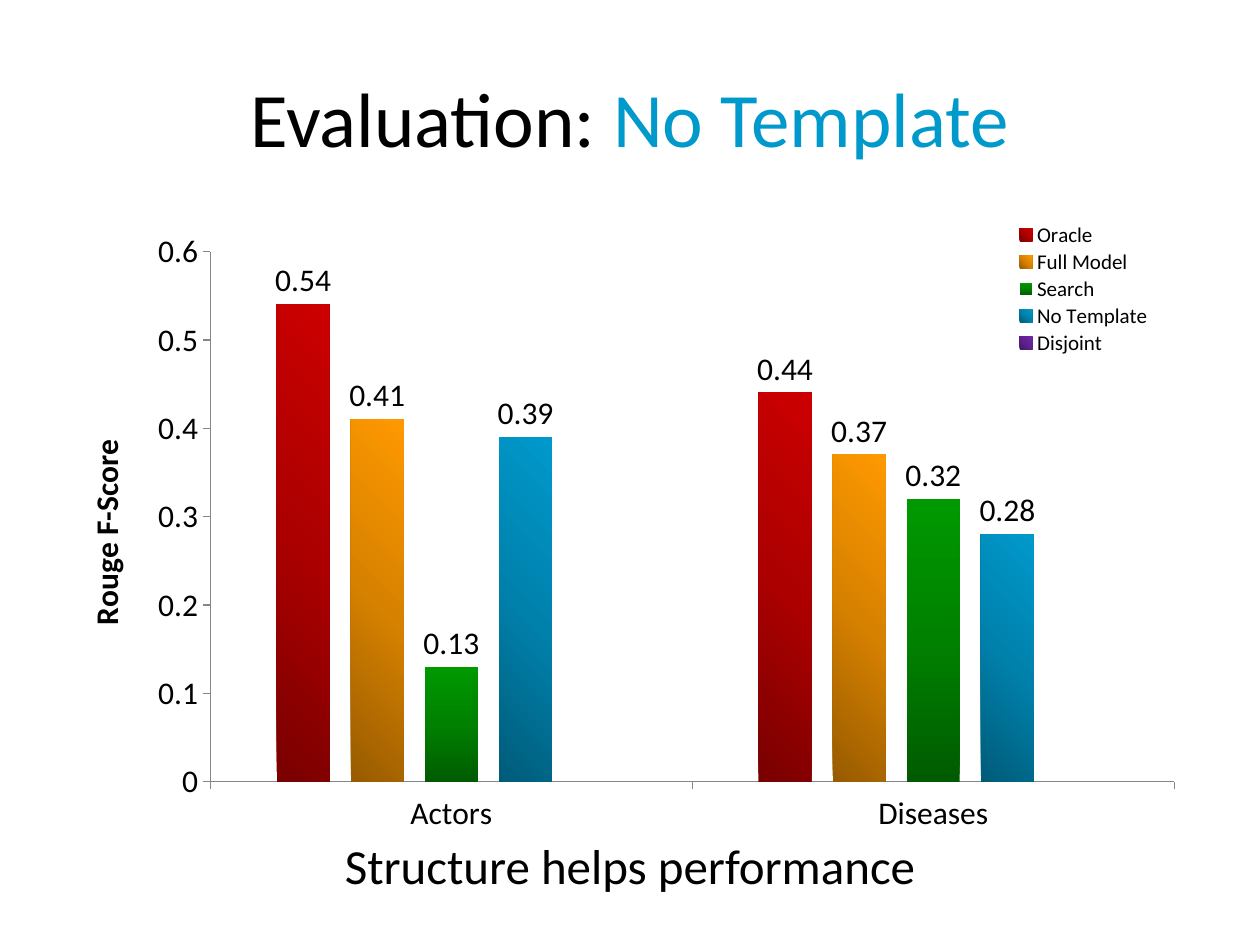
from lxml import etree
from pptx import Presentation
from pptx import util as u
from pptx.chart.data import CategoryChartData
from pptx.dml.color import RGBColor
from pptx.enum import chart as charts, text
from pptx.oxml import ns

BLACK = RGBColor(0, 0, 0)
BLUE = RGBColor(0x00, 0x99, 0xCC)
GRAY = RGBColor(0x86, 0x86, 0x86)
FONT = "Calibri"

SERIES = [
    ("Oracle", (0.54, 0.44), ("790000", "AC0000", "CC0000"), 315),
    ("Full Model", (0.41, 0.37), ("975B00", "D78100", "FF9900"), 315),
    ("Search", (0.13, 0.32), ("005B00", "008100", "009900"), 270),
    ("No Template", (0.39, 0.28), ("005B79", "0081AC", "0099CC"), 315),
    ("Disjoint", (None, None), ("431764", "5F218E", "7128A8"), 315),
]


def set_layout(element, index, values):
    for old in element.findall(ns.qn("c:layout")):
        element.remove(old)
    layout = etree.Element(ns.qn("c:layout"))
    manual = etree.SubElement(layout, ns.qn("c:manualLayout"))
    for tag, value in values.items():
        etree.SubElement(manual, ns.qn(f"c:{tag}"), val=str(value))
    element.insert(index, layout)


def style_font(font, size, color=BLACK, bold=False):
    for name, value in {"name": FONT, "size": u.Pt(size), "bold": bold}.items():
        setattr(font, name, value)
    font.color.rgb = color


presentation = Presentation()
presentation.slide_width = u.Pt(720)
presentation.slide_height = u.Pt(540)
slide = presentation.slides.add_slide(presentation.slide_layouts[6])

TEXTS = [
    (21.6, 90, 44, text.MSO_ANCHOR.MIDDLE, [("Evaluation: ", BLACK), ("No Template", BLUE)]),
    (473.76, 48.24, 28, text.MSO_ANCHOR.TOP, [("Structure helps performance", BLACK)]),
]
for top, height, size, anchor, runs in TEXTS:
    box = slide.shapes.add_textbox(u.Pt(36), u.Pt(top), u.Pt(648), u.Pt(height))
    frame = box.text_frame
    frame.word_wrap = True
    frame.vertical_anchor = anchor
    paragraph = frame.paragraphs[0]
    paragraph.alignment = text.PP_ALIGN.CENTER
    for words, color in runs:
        run = paragraph.add_run()
        run.text = words
        style_font(run.font, size, color)

data = CategoryChartData()
data.categories = ["Actors", "Diseases"]
for name, values, colors, angle in SERIES:
    data.add_series(name, values)
chart = slide.shapes.add_chart(
    charts.XL_CHART_TYPE.COLUMN_CLUSTERED,
    u.Pt(36), u.Pt(126), u.Pt(648), u.Pt(356.4), data,
).chart
style_font(chart.font, 18)
chart.has_title = False

plot = chart.plots[0]
plot.gap_width = 250
plot.overlap = -40
plot.vary_by_categories = False
plot.has_data_labels = True
labels = plot.data_labels
labels.show_value = True
labels.position = charts.XL_LABEL_POSITION.OUTSIDE_END
style_font(labels.font, 18)

for series, (name, values, colors, angle) in zip(plot.series, SERIES):
    series.invert_if_negative = False
    properties = series.format.fill._xPr
    gradient = etree.Element(ns.qn("a:gradFill"), rotWithShape="1")
    stops = etree.SubElement(gradient, ns.qn("a:gsLst"))
    for position, color in zip((0, 50000, 100000), colors):
        stop = etree.SubElement(stops, ns.qn("a:gs"), pos=str(position))
        etree.SubElement(stop, ns.qn("a:srgbClr"), val=color)
    etree.SubElement(gradient, ns.qn("a:lin"), ang=str(angle * 60000), scaled="0")
    properties.insert(0, gradient)

for axis in (chart.category_axis, chart.value_axis):
    axis.has_major_gridlines = False
    axis.major_tick_mark = charts.XL_TICK_MARK.OUTSIDE
    axis.minor_tick_mark = charts.XL_TICK_MARK.NONE
    axis.format.line.color.rgb = GRAY
    axis.format.line.width = u.Pt(0.75)
    style_font(axis.tick_labels.font, 18)

value_axis = chart.value_axis
value_axis.minimum_scale = 0
value_axis.maximum_scale = 0.6
value_axis.major_unit = 0.1
axis_title = value_axis.axis_title.text_frame
axis_title.text = "Rouge F-Score"
style_font(axis_title.paragraphs[0].runs[0].font, 18, bold=True)

chart.has_legend = True
legend = chart.legend
legend.position = charts.XL_LEGEND_POSITION.RIGHT
legend.include_in_layout = True
style_font(legend.font, 12)
set_layout(legend._element, 1, {"xMode": "edge", "yMode": "edge", "x": 0.83, "y": 0, "w": 0.14, "h": 0.22})
set_layout(
    chart._chartSpace.chart.plotArea, 0,
    {"layoutTarget": "inner", "xMode": "edge", "yMode": "edge", "x": 0.13, "y": 0.05, "w": 0.85, "h": 0.85},
)

presentation.save("out.pptx")
